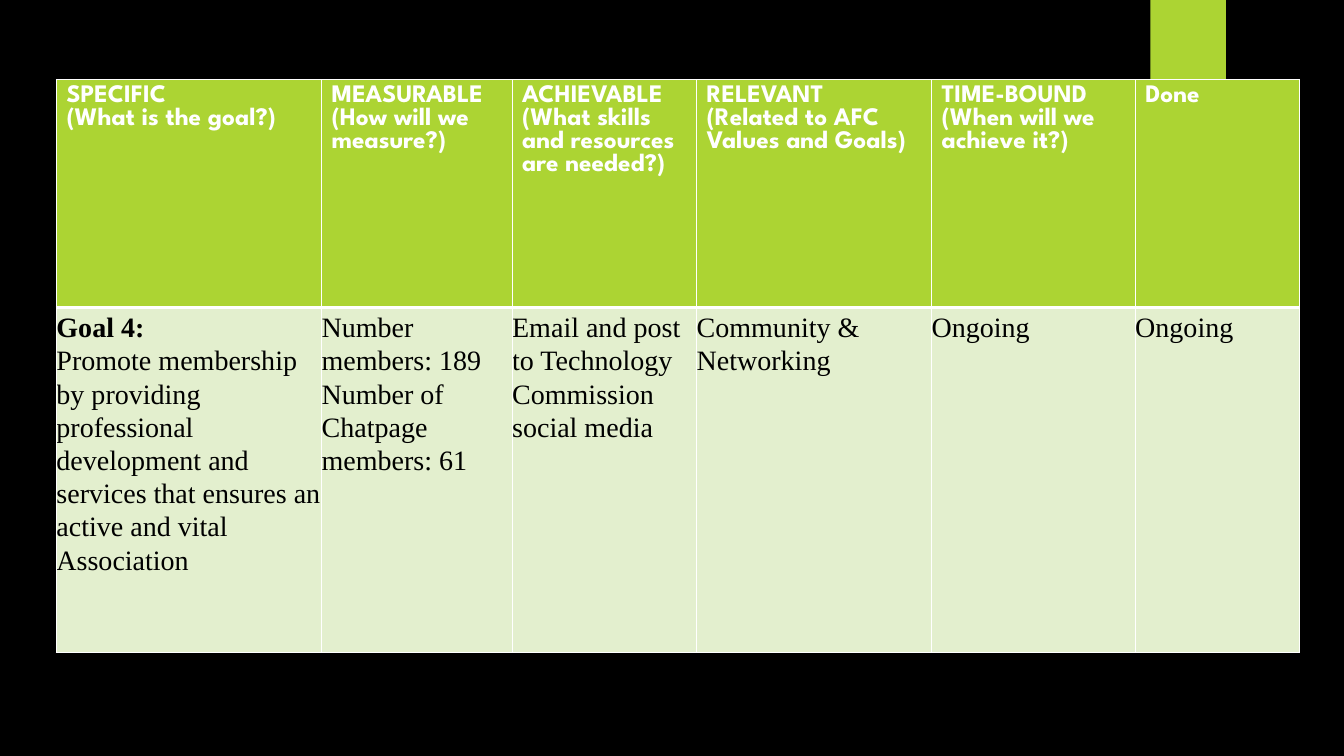
"""Build the goal-planning slide with its six-column table."""
import pptx
import pptx.dml.color
import pptx.enum.shapes
import pptx.oxml
import pptx.oxml.ns
import pptx.util
from pptx.util import Inches

LIME, PALE, WHITE, BLACK = "ACD433", "E3EFCE", "FFFFFF", "000000"
HEADERS = [
    ["SPECIFIC", "(What is the goal?)"],
    ["MEASURABLE", "(How will we measure?)"],
    ["ACHIEVABLE", "(What skills and resources are needed?)"],
    ["RELEVANT", "(Related to AFC", "Values and Goals)"],
    ["TIME-BOUND", "(When will we achieve it?)"],
    ["Done"],
]
GOAL = [
    ["Goal 4:", "Promote membership by providing professional development and "
     "services that ensures an active and vital Association"],
    ["Number members: 189 Number of Chatpage members: 61"],
    ["Email and post to Technology Commission social media"],
    ["Community &", "Networking"],
    ["Ongoing"],
    ["Ongoing"],
]
COLUMN_WIDTHS = [2.63, 1.89, 1.83, 2.33, 2.02, 1.63]
ROW_HEIGHTS = [2.26, 3.42]


def paint(fill, color):
    fill.solid()
    fill.fore_color.rgb = pptx.dml.color.RGBColor.from_string(color)


def draw_borders(cell, widths):
    properties = cell._tc.get_or_add_tcPr()
    for position, (side, width) in enumerate(widths.items()):
        line = pptx.oxml.parse_xml(
            f'<a:ln{side} {pptx.oxml.ns.nsdecls("a")} w="{pptx.util.Pt(width)}">'
            f'<a:solidFill><a:srgbClr val="{WHITE}"/></a:solidFill></a:ln{side}>')
        properties.insert(position, line)


deck = pptx.Presentation()
deck.slide_width, deck.slide_height = Inches(13.33), Inches(7.5)
page = deck.slides.add_slide(deck.slide_layouts[6])
paint(page.background.fill, BLACK)

tab = page.shapes.add_shape(
    pptx.enum.shapes.MSO_SHAPE.RECTANGLE,
    Inches(11.41), Inches(0), Inches(0.75), Inches(1.25))
tab.shadow.inherit = False
paint(tab.fill, LIME)
tab.line.fill.background()

table = page.shapes.add_table(
    2, 6, Inches(0.56), Inches(0.79), Inches(12.33), Inches(5.68)).table
for column, width in zip(table.columns, COLUMN_WIDTHS):
    column.width = Inches(width)
for row, height in zip(table.rows, ROW_HEIGHTS):
    row.height = Inches(height)

for row_index, contents in enumerate([HEADERS, GOAL]):
    is_header = row_index == 0
    for column_index, lines in enumerate(contents):
        cell = table.cell(row_index, column_index)
        paint(cell.fill, LIME if is_header else PALE)
        draw_borders(cell, {"L": 1, "R": 1, "T": 1 if is_header else 3,
                            "B": 3 if is_header else 1})
        if not is_header:
            cell.margin_left = cell.margin_right = cell.margin_bottom = 0
            cell.margin_top = Inches(0.03)
        for line_index, text in enumerate(lines):
            frame = cell.text_frame
            para = frame.add_paragraph() if line_index else frame.paragraphs[0]
            if not is_header:
                para.line_spacing = 1.07
            span = para.add_run()
            span.text = text
            span.font.name = "League Spartan" if is_header else "Times New Roman"
            span.font.size = pptx.util.Pt(18 if is_header else 20)
            span.font.bold = is_header or text == "Goal 4:"
            paint(span.font.fill, WHITE if is_header else BLACK)

deck.save("out.pptx")
